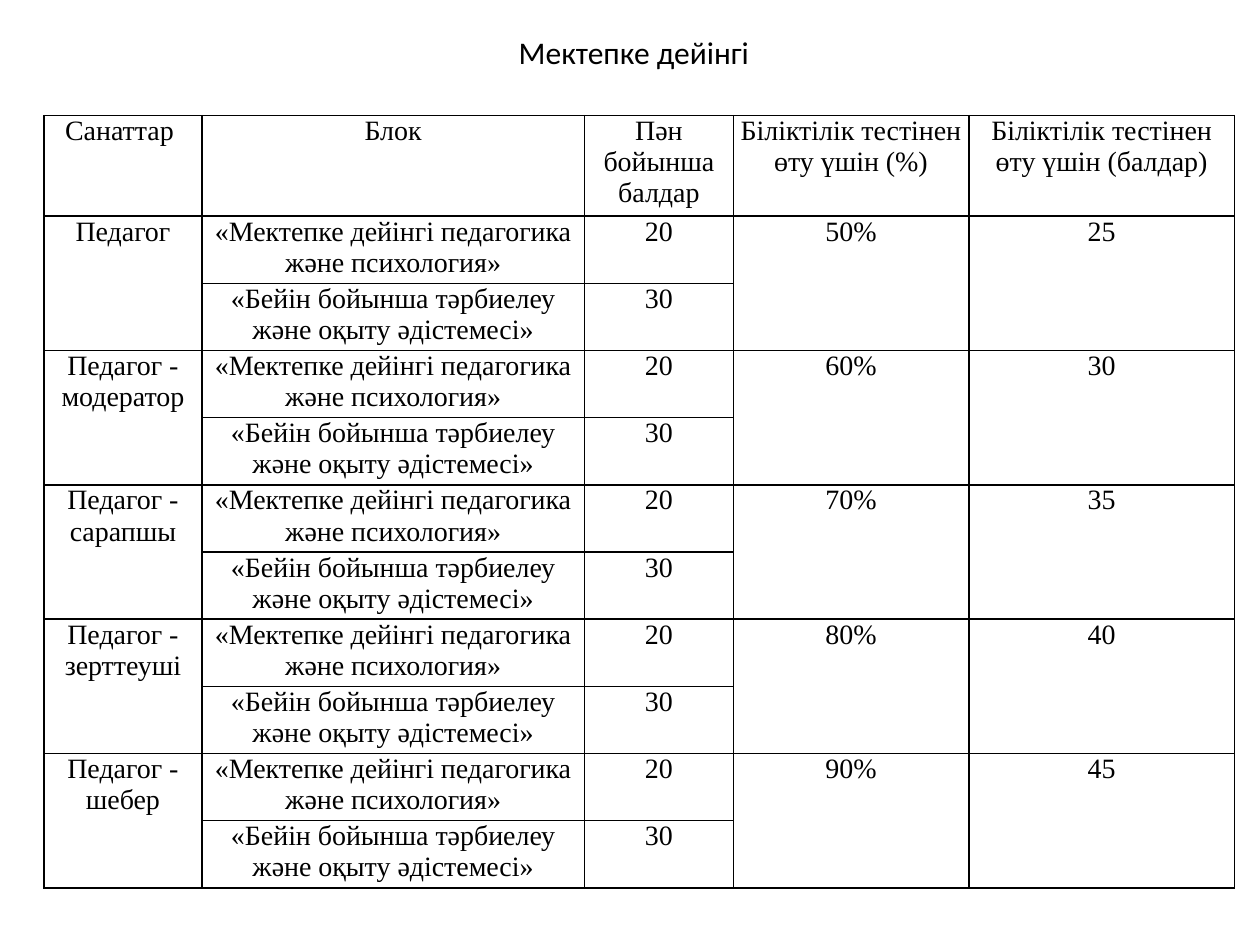
from pptx import Presentation
from pptx import util as u
from pptx.dml import color
from pptx.enum import text
from pptx.oxml import parse_xml
from pptx.oxml import ns

Cm, Pt = u.Cm, u.Pt
COLORS = {"text": "000000", "border": "000000"}
TITLE = "Мектепке дейінгі"
HEADERS = ["Санаттар ", "Блок", "Пән бойынша балдар",
           "Біліктілік тестінен өту үшін (%)",
           "Біліктілік тестінен өту үшін (балдар)"]
BLOCKS = [("«Мектепке дейінгі педагогика және психология»", "20"),
          ("«Бейін бойынша тәрбиелеу және оқыту әдістемесі»", "30")]
CATEGORIES = [("Педагог", "50%", "25"),
              ("Педагог - модератор", "60%", "30"),
              ("Педагог - сарапшы", "70%", "35"),
              ("Педагог - зерттеуші", "80%", "40"),
              ("Педагог - шебер", "90%", "45")]
COL_WIDTHS = [3.18, 7.72, 3, 4.75, 5.36]
HEADER_HEIGHT = 2.03


def set_font(p, name, size):
    p.alignment = text.PP_ALIGN.CENTER
    p.font.name = name
    p.font.size = Pt(size)
    p.font.color.rgb = color.RGBColor.from_string(COLORS["text"])


def set_borders(cell):
    tcPr = cell._tc.get_or_add_tcPr()
    for i, side in enumerate(("lnL", "lnR", "lnT", "lnB")):
        tcPr.insert(i, parse_xml(
            f'<a:{side} {ns.nsdecls("a")} w="{Pt(1)}"><a:solidFill>'
            f'<a:srgbClr val="{COLORS["border"]}"/></a:solidFill></a:{side}>'))


def format_cell(cell):
    cell.fill.background()
    set_borders(cell)
    cell.margin_left = cell.margin_right = Cm(0.08)
    cell.margin_top = cell.margin_bottom = 0
    set_font(cell.text_frame.paragraphs[0], "Times New Roman", 16)


def add_title(s, left, top, width, height):
    sp = s.shapes.title
    sp.left, sp.top, sp.width, sp.height = map(Cm, (left, top, width, height))
    tf = sp.text_frame
    tf.text = TITLE
    tf.word_wrap = False
    tf.auto_size = text.MSO_AUTO_SIZE.NONE
    tf.vertical_anchor = text.MSO_ANCHOR.MIDDLE
    set_font(tf.paragraphs[0], "Calibri", 18)


def add_score_table(s, left, top, width, height):
    n_rows = 1 + len(CATEGORIES) * len(BLOCKS)
    table = s.shapes.add_table(n_rows, len(HEADERS), Cm(left), Cm(top),
                               Cm(width), Cm(height)).table
    table.first_row = table.horz_banding = False
    for col, w in zip(table.columns, COL_WIDTHS):
        col.width = Cm(w * width / sum(COL_WIDTHS))
    row_height = (height - HEADER_HEIGHT) / (n_rows - 1)
    for i, row in enumerate(table.rows):
        row.height = Cm(row_height if i else HEADER_HEIGHT)

    for c, header in enumerate(HEADERS):
        table.cell(0, c).text = header
    for i, (category, percent, points) in enumerate(CATEGORIES):
        first = 1 + i * len(BLOCKS)
        for j, (block, score) in enumerate(BLOCKS):
            table.cell(first + j, 1).text = block
            table.cell(first + j, 2).text = score
        for c, value in ((0, category), (3, percent), (4, points)):
            table.cell(first, c).merge(table.cell(first + len(BLOCKS) - 1, c))
            table.cell(first, c).text = value
    for cell in table.iter_cells():
        format_cell(cell)


def main():
    prs = Presentation()
    prs.slide_width, prs.slide_height = Cm(25.4), Cm(19.05)
    s = prs.slides.add_slide(prs.slide_layouts[5])
    add_score_table(s, 0.89, 2.33, 24, 15.57)
    add_title(s, 10.1, 0.54, 5.36, 1.02)
    prs.save("out.pptx")


if __name__ == "__main__":
    main()
